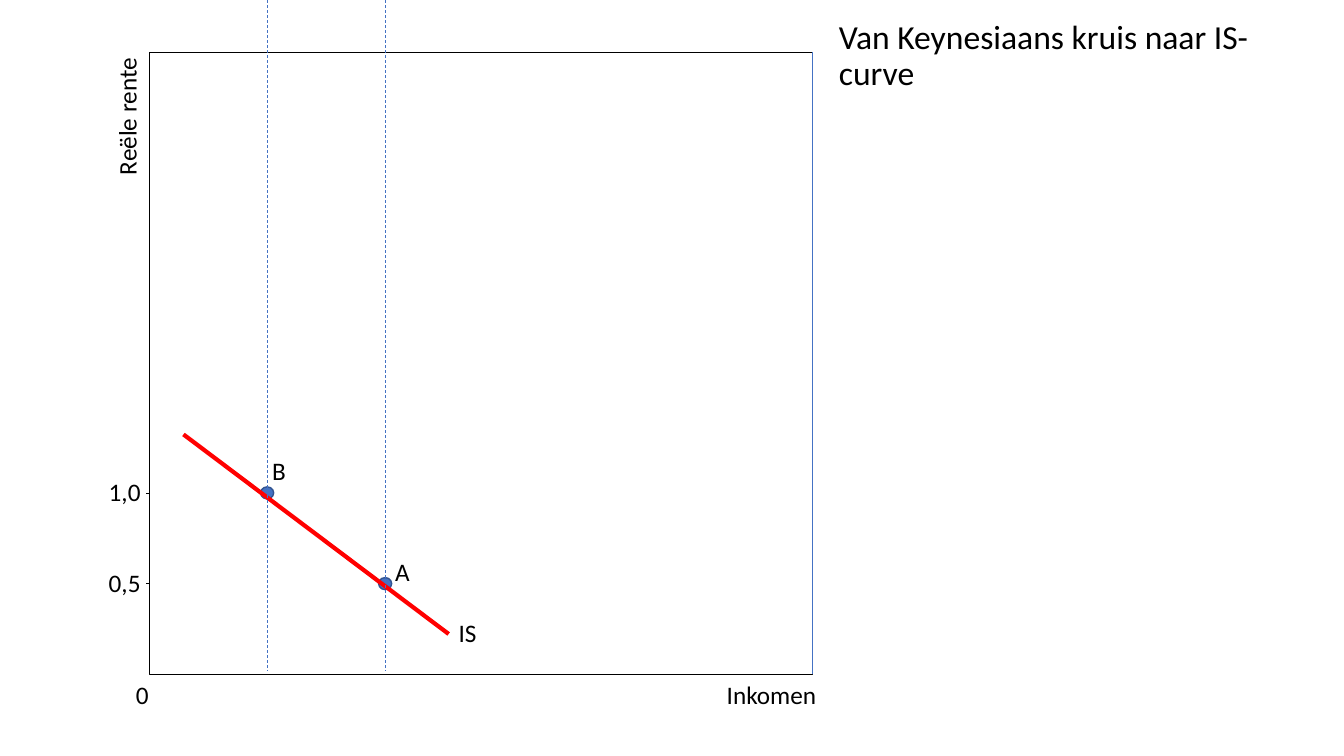
from collections import namedtuple

from pptx import Presentation
from pptx import util as u
from pptx.dml.color import RGBColor
from pptx.enum import dml, shapes, text
from pptx.oxml.ns import qn

BLACK = RGBColor(0x00, 0x00, 0x00)
BLUE = RGBColor(0x44, 0x72, 0xC4)
DARK_BLUE = RGBColor(0x32, 0x54, 0x91)
RED = RGBColor(0xFF, 0x00, 0x00)
FONT = "Calibri"
LABEL_HEIGHT = 0.4
DOT_WIDTH, DOT_HEIGHT = 0.13, 0.12
INCHES_PER_POINT_OF_RATE = 1.8

Box = namedtuple("Box", "left top width height")
TITLE_BOX = Box(8.22, 0.21, 5, 0.7)
PLOT_BOX = Box(1.48, 0.52, 6.58, 6.17)


def inches(*lengths):
    return [u.Inches(length) for length in lengths]


def style_paragraph(para, size):
    para.font.size = u.Pt(size)
    para.font.name = FONT
    para.font.color.rgb = BLACK


def add_title(slide, box, words):
    title = slide.shapes.title
    title.left, title.top, title.width, title.height = inches(*box)
    frame = title.text_frame
    frame.text = words
    frame.word_wrap = True
    frame.vertical_anchor = text.MSO_ANCHOR.MIDDLE
    para = frame.paragraphs[0]
    para.alignment = text.PP_ALIGN.LEFT
    para.line_spacing = 0.9
    style_paragraph(para, 24)


def add_label(slide, words, left, top, width, rotation=0):
    label = slide.shapes.add_textbox(*inches(left, top, width, LABEL_HEIGHT))
    label.rotation = rotation
    frame = label.text_frame
    frame.word_wrap = True
    frame.auto_size = text.MSO_AUTO_SIZE.SHAPE_TO_FIT_TEXT
    frame.text = words
    style_paragraph(frame.paragraphs[0], 18)


def add_line(slide, start, end, color, width=0.5, dashed=False):
    line = slide.shapes.add_connector(
        shapes.MSO_CONNECTOR.STRAIGHT, *inches(*start, *end))
    line.line.color.rgb = color
    line.line.width = u.Pt(width)
    if dashed:
        line.line.dash_style = dml.MSO_LINE.DASH
    properties = line._element.spPr
    properties.append(properties.makeelement(qn("a:effectLst"), {}))


def add_outlined(slide, kind, box, line_color, fill_color=None):
    shape = slide.shapes.add_shape(kind, *inches(*box))
    shape.shadow.inherit = False
    shape.line.color.rgb = line_color
    shape.line.width = u.Pt(1)
    if fill_color is None:
        shape.fill.background()
    else:
        shape.fill.solid()
        shape.fill.fore_color.rgb = fill_color


def add_is_plot(slide, box):
    """Draw the IS curve in a frame of income against the real interest rate."""
    right, bottom = box.left + box.width, box.top + box.height
    add_outlined(slide, shapes.MSO_SHAPE.RECTANGLE, box, BLACK)
    add_line(slide, (right, box.top), (right, bottom), BLUE)

    add_label(slide, "0", box.left - 0.23, bottom, 0.46)
    add_label(slide, "Inkomen", right - 0.95, bottom, 1.97)
    add_label(slide, "Reële rente", box.left - 1.14, box.top + 0.2, 1.83, 270)

    # Each point: name, rate, rate label, income offset, name offset
    points = [("A", 0.5, "0,5", 2.34, (0, -0.32)),
              ("B", 1.0, "1,0", 1.17, (-0.05, -0.42))]
    for name, rate, rate_label, income, (shift_x, shift_y) in points:
        x = box.left + income
        y = bottom - rate * INCHES_PER_POINT_OF_RATE
        add_line(slide, (box.left, y), (box.left - 0.03, y), BLACK)
        add_label(slide, rate_label, box.left - 0.5, y - 0.21, 0.61)
        dot = Box(x - DOT_WIDTH / 2, y - DOT_HEIGHT / 2, DOT_WIDTH, DOT_HEIGHT)
        add_outlined(slide, shapes.MSO_SHAPE.FLOWCHART_CONNECTOR, dot,
                     DARK_BLUE, BLUE)
        add_label(slide, name, x + shift_x, y + shift_y, 0.4)

    curve_end = (box.left + 2.97, bottom - 0.4)
    add_line(slide, (box.left + 0.34, bottom - 2.38), curve_end, RED, 3)
    add_label(slide, "IS", curve_end[0], curve_end[1] - 0.21, 0.97)

    for _, _, _, income, _ in points:
        x = box.left + income
        add_line(slide, (x, 0), (x, bottom - 0.04), BLUE, dashed=True)


def main():
    deck = Presentation()
    deck.slide_width, deck.slide_height = inches(13.33, 7.5)
    slide = deck.slides.add_slide(deck.slide_layouts.get_by_name("Title Only"))
    add_title(slide, TITLE_BOX, "Van Keynesiaans kruis naar IS-curve")
    add_is_plot(slide, PLOT_BOX)
    deck.save("out.pptx")


if __name__ == "__main__":
    main()
